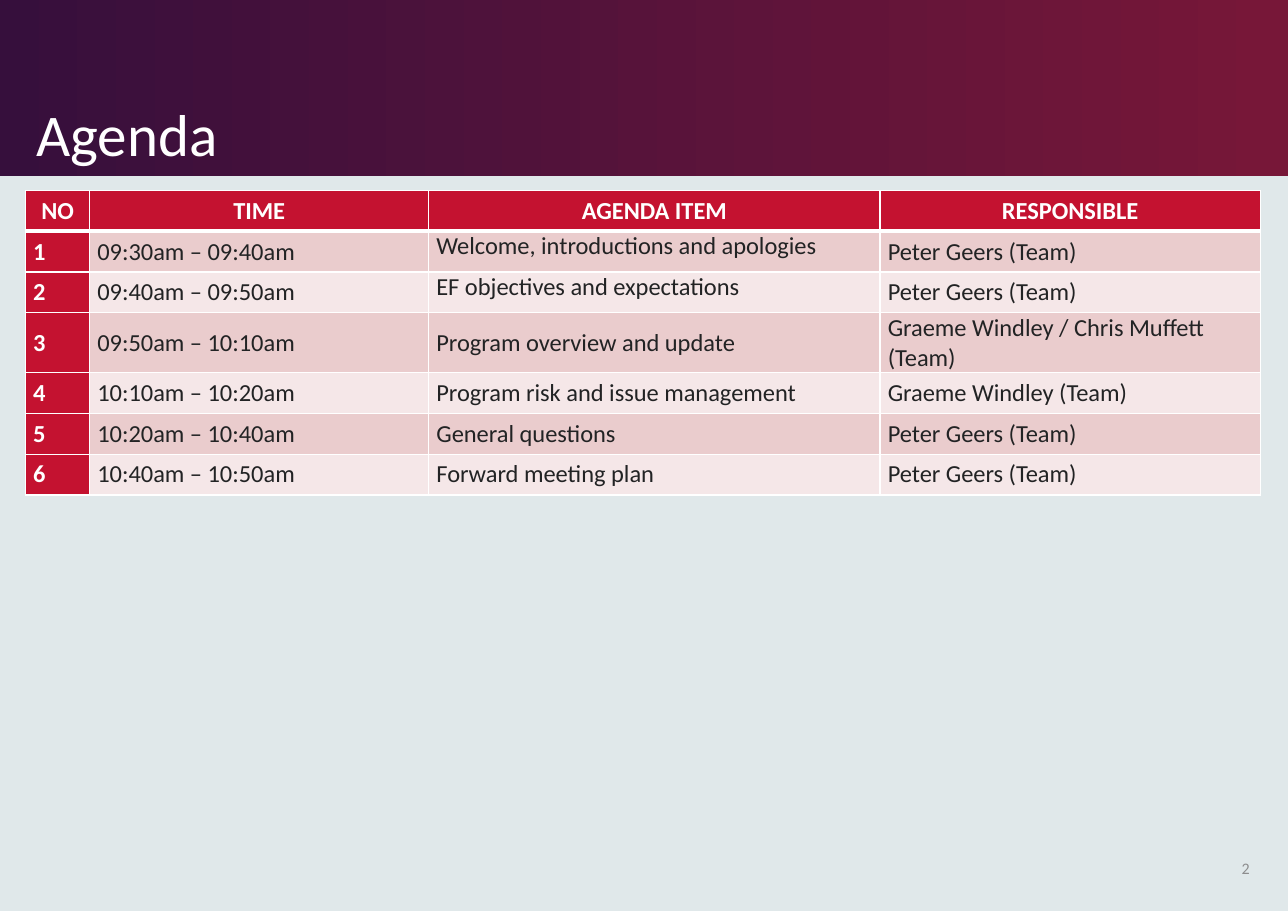
from lxml.etree import SubElement
from pptx import Presentation
from pptx.dml.color import RGBColor
from pptx.enum.shapes import MSO_SHAPE as Shape
from pptx.enum.text import MSO_ANCHOR as Anchor, MSO_AUTO_SIZE as AutoSize, PP_ALIGN as Align
from pptx.oxml.ns import qn
from pptx.util import Pt

COLORS = {
    "page": "E0E8EA", "band_start": "360F3C", "band_end": "771738",
    "white": "FFFFFF", "number": "8D8D8E", "accent": "C41230",
    "text": "222324", "odd": "EACCCD", "even": "F5E7E8",
}
WIDTH, HEIGHT = 841.68, 595.44
BAND_BOX = (0, 0, WIDTH, 115.2)
TABLE_BOX = (16.6, 124.6, 807, 186.5)
NUMBER_BOX = (784.1, 551.5, 39.6, 31.7)
COLUMN_WIDTHS = (42, 221.6, 295, 248.4)
HEADINGS = ("NO", "TIME", "AGENDA ITEM", "RESPONSIBLE")
AGENDA = (
    ("09:30am – 09:40am", "Welcome, introductions and apologies", "Peter Geers (Team)"),
    ("09:40am – 09:50am", "EF objectives and expectations", "Peter Geers (Team)"),
    ("09:50am – 10:10am", "Program overview and update", "Graeme Windley / Chris Muffett (Team)"),
    ("10:10am – 10:20am", "Program risk and issue management", "Graeme Windley (Team)"),
    ("10:20am – 10:40am", "General questions", "Peter Geers (Team)"),
    ("10:40am – 10:50am", "Forward meeting plan", "Peter Geers (Team)"),
)
TOP_ALIGNED = {(1, 2), (2, 2)}


def color(name):
    """Return the named colour as RGB."""
    return RGBColor.from_string(COLORS[name])


def apply(target, values):
    """Set each attribute of the target from a dict."""
    for name, value in values.items():
        setattr(target, name, value)


def place(shape, box):
    """Move and size a shape to a box in points."""
    apply(shape, dict(zip(("left", "top", "width", "height"), map(Pt, box))))


def write(frame, text, size, ink, bold=False, **para_format):
    """Write one formatted paragraph into a text frame."""
    para = frame.paragraphs[0]
    apply(para, para_format)
    span = para.add_run()
    span.text = text
    apply(span.font, {"name": "Calibri", "size": Pt(size), "bold": bold})
    span.font.color.rgb = color(ink)


def add_header(page, box):
    """Draw the gradient band with the title at its foot."""
    left, top, width, height = box
    band = page.shapes.add_shape(Shape.RECTANGLE, *map(Pt, box))
    band.shadow.inherit = False
    band.line.fill.background()
    band.fill.gradient()
    band.fill.gradient_angle = 0
    for stop, position, name in zip(band.fill.gradient_stops, (0, 0.99), ("band_start", "band_end")):
        stop.position = position
        stop.color.rgb = color(name)
    title = page.shapes.title
    title._element.addprevious(band._element)
    place(title, (left + 16.6, top + 11.5, 621.4, height - 12.2))
    apply(title.text_frame, {"auto_size": AutoSize.NONE, "vertical_anchor": Anchor.BOTTOM, "word_wrap": True})
    write(title.text_frame, "Agenda", 38.6, "white", alignment=Align.LEFT, line_spacing=0.9)


def add_borders(cell, top, bottom):
    """Give a cell white borders, with its own top and bottom widths."""
    properties = cell._tc.get_or_add_tcPr()
    for side, width in (("L", 1), ("R", 1), ("T", top), ("B", bottom)):
        line = SubElement(properties, qn(f"a:ln{side}"), w=str(Pt(width)))
        fill = SubElement(line, qn("a:solidFill"))
        SubElement(fill, qn("a:srgbClr"), val=COLORS["white"])


def add_agenda(page, box):
    """Build the agenda table with red headings and banded rows."""
    rows = [HEADINGS] + [(str(number), *entry) for number, entry in enumerate(AGENDA, 1)]
    table = page.shapes.add_table(len(rows), len(HEADINGS), *map(Pt, box)).table
    for column, width in zip(table.columns, COLUMN_WIDTHS):
        column.width = Pt(width)
    for r, entry in enumerate(rows):
        table.rows[r].height = Pt(box[3] / len(rows))
        for c, text in enumerate(entry):
            cell = table.cell(r, c)
            strong = r == 0 or c == 0
            apply(cell, {
                "margin_left": Pt(5), "margin_right": Pt(5), "margin_top": 0, "margin_bottom": 0,
                "vertical_anchor": Anchor.TOP if (r, c) in TOP_ALIGNED else Anchor.MIDDLE,
            })
            add_borders(cell, 3 if r == 1 else 1, 3 if r == 0 else 1)
            cell.fill.solid()
            cell.fill.fore_color.rgb = color("accent" if strong else "odd" if r % 2 else "even")
            write(cell.text_frame, text, 16, "white" if strong else "text", strong,
                  alignment=Align.LEFT if r else Align.CENTER,
                  space_before=Pt(1), space_after=Pt(1))


def add_page_number(page, box):
    """Write the page number at the right of its box."""
    frame = page.shapes.add_textbox(*map(Pt, box)).text_frame
    apply(frame, {"word_wrap": True, "vertical_anchor": Anchor.MIDDLE})
    write(frame, "2", 10.5, "number", alignment=Align.RIGHT)


def main():
    """Build the agenda slide and save the deck."""
    deck = Presentation()
    apply(deck, {"slide_width": Pt(WIDTH), "slide_height": Pt(HEIGHT)})
    page = deck.slides.add_slide(deck.slide_layouts.get_by_name("Title Only"))
    page.background.fill.solid()
    page.background.fill.fore_color.rgb = color("page")
    add_header(page, BAND_BOX)
    add_agenda(page, TABLE_BOX)
    add_page_number(page, NUMBER_BOX)
    deck.save("out.pptx")


if __name__ == "__main__":
    main()
